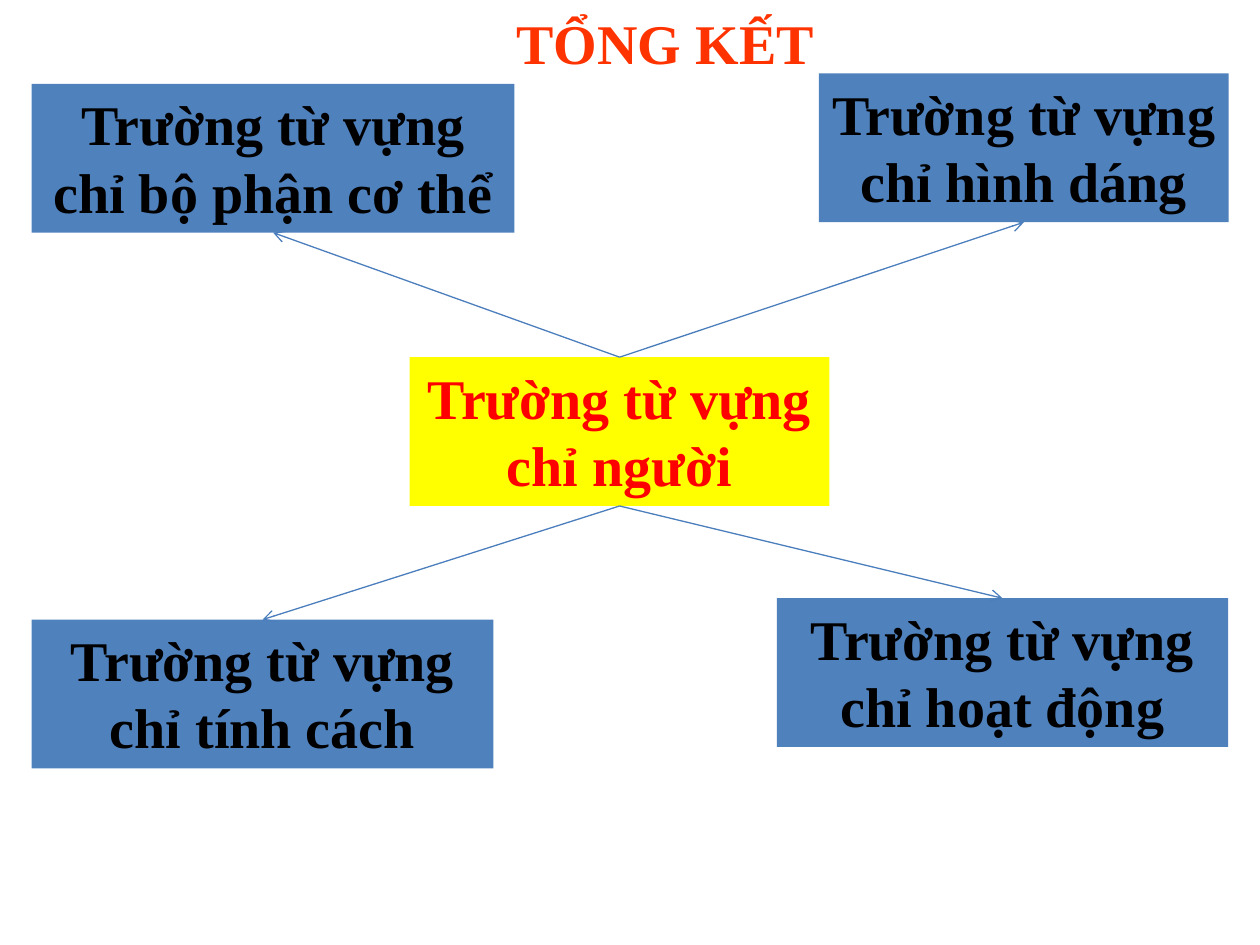
import pptx
import pptx.util
import pptx.dml.color
import pptx.enum.shapes
import pptx.enum.text
import pptx.oxml
import pptx.oxml.ns
from pptx.util import Cm

COLORS = {
    "title": "FF3300",
    "center_fill": "FFFF00",
    "center_text": "FF0000",
    "branch_fill": "4F81BD",
    "branch_text": "000000",
    "arrow": "4B7EBC",
}
BOX_HEIGHT = 3
TOP_SITE, BOTTOM_SITE = 0, 2

# left, top, width in cm, text, whether the box lies above the centre
BRANCHES = [
    (16.51, 1.48, 8.26, "Trường từ vựng chỉ hình dáng", True),
    (0.64, 1.69, 9.73, "Trường từ vựng chỉ bộ phận cơ thể", True),
    (0.64, 12.49, 9.31, "Trường từ vựng chỉ tính cách", False),
    (15.66, 12.06, 9.1, "Trường từ vựng chỉ hoạt động", False),
]


def rgb(name):
    return pptx.dml.color.RGBColor.from_string(COLORS[name])


def format_paragraph(p, color, align):
    p.alignment = align
    p.font.name = "Times New Roman"
    p.font.size = pptx.util.Pt(32)
    p.font.bold = True
    p.font.color.rgb = rgb(color)


def set_title(s, text):
    title = s.shapes.title
    title.left, title.top = Cm(10.16), Cm(-0.85)
    title.width, title.height = Cm(10.8), Cm(3.39)
    tf = title.text_frame
    tf.text = text
    tf.vertical_anchor = pptx.enum.text.MSO_ANCHOR.MIDDLE
    format_paragraph(tf.paragraphs[0], "title", pptx.enum.text.PP_ALIGN.LEFT)


def add_box(s, left, top, width, text, role):
    """Add a filled box; each line of the text becomes a paragraph."""
    sp = s.shapes.add_shape(pptx.enum.shapes.MSO_SHAPE.RECTANGLE,
                            Cm(left), Cm(top), Cm(width), Cm(BOX_HEIGHT))
    sp.shadow.inherit = False
    sp.fill.solid()
    sp.fill.fore_color.rgb = rgb(f"{role}_fill")
    sp.line.fill.background()
    tf = sp.text_frame
    tf.text = text
    tf.word_wrap = True
    tf.vertical_anchor = pptx.enum.text.MSO_ANCHOR.TOP
    for p in tf.paragraphs:
        format_paragraph(p, f"{role}_text", pptx.enum.text.PP_ALIGN.CENTER)
    return sp


def add_arrow(s, start, start_site, end, end_site):
    """Connect two boxes with an open arrowhead at the end."""
    line = s.shapes.add_connector(
        pptx.enum.shapes.MSO_CONNECTOR.STRAIGHT, 0, 0, 0, 0)
    line.begin_connect(start, start_site)
    line.end_connect(end, end_site)
    line.line.width = pptx.util.Pt(0.75)
    line.line.color.rgb = rgb("arrow")
    ns = pptx.oxml.ns.nsdecls("a")
    line.line._get_or_add_ln().append(
        pptx.oxml.parse_xml(f'<a:tailEnd {ns} type="arrow"/>'))
    line._element.spPr.append(pptx.oxml.parse_xml(f"<a:effectLst {ns}/>"))


def main():
    prs = pptx.Presentation()
    prs.slide_width, prs.slide_height = Cm(25.4), Cm(19.05)
    s = prs.slides.add_slide(prs.slide_layouts[5])
    set_title(s, "TỔNG KẾT")
    center = add_box(s, 8.26, 7.2, 8.46, "Trường từ vựng\nchỉ người", "center")
    for left, top, width, text, above in BRANCHES:
        branch = add_box(s, left, top, width, text, "branch")
        sites = (TOP_SITE, BOTTOM_SITE) if above else (BOTTOM_SITE, TOP_SITE)
        add_arrow(s, center, sites[0], branch, sites[1])
    prs.save("out.pptx")


if __name__ == "__main__":
    main()
